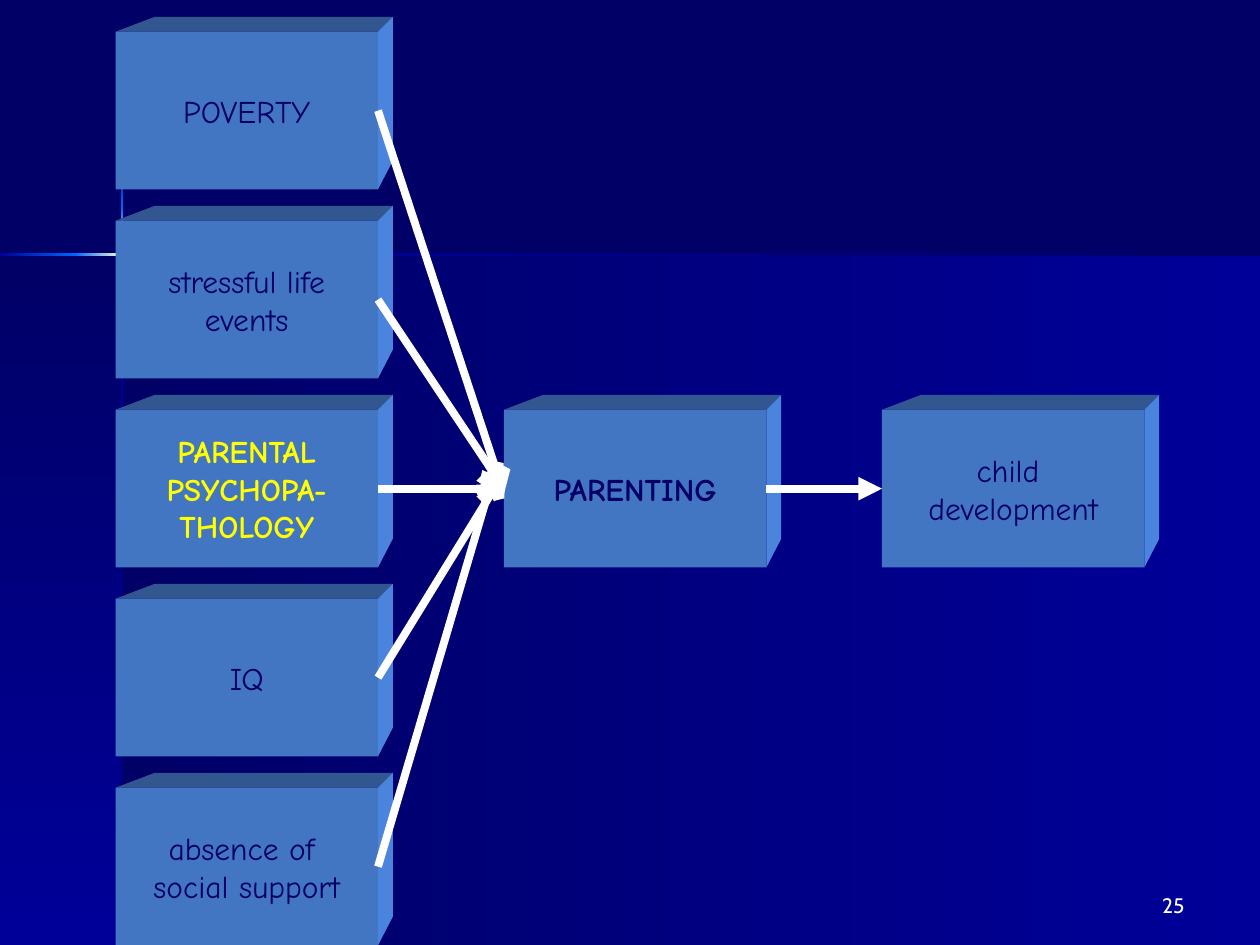
import copy

import pptx
import pptx.dml.color
import pptx.enum.shapes
import pptx.enum.text
import pptx.oxml
import pptx.oxml.ns
import pptx.util

Cm = pptx.util.Cm
Pt = pptx.util.Pt
ALIGN = pptx.enum.text.PP_ALIGN
ANCHOR = pptx.enum.text.MSO_ANCHOR
RECT = pptx.enum.shapes.MSO_SHAPE.RECTANGLE
STRAIGHT = pptx.enum.shapes.MSO_CONNECTOR.STRAIGHT

NAVY, BLUE, AZURE, CREAM = "000066", "000099", "0066FF", "FFFFCC"
WHITE, YELLOW = "FFFFFF", "FFFF00"
FRONT, TOP, SIDE = "4275C2", "32568F", "4A84DC"
WIDE, HIGH, DEEP = 5.29, 3.18, 0.3  # block size in cm


def rgb(code):
    return pptx.dml.color.RGBColor.from_string(code)


class Deck:
    """Style of the diagram and the slide it is drawn on."""

    font = "Comic Neue"
    size = 18

    def __init__(self, wide, high):
        self.show = pptx.Presentation()
        self.show.slide_width = Cm(wide)
        self.show.slide_height = Cm(high)
        self.slide = self.show.slides.add_slide(self.show.slide_layouts[6])
        fill = self.slide.background.fill
        fill.solid()
        fill.fore_color.rgb = rgb(NAVY)

    def rect(self, x, y, w, h):
        shape = self.slide.shapes.add_shape(RECT, Cm(x), Cm(y), Cm(w), Cm(h))
        shape.shadow.inherit = False
        shape.line.fill.background()
        return shape

    def blend(self, x, y, w, h, angle, *codes):
        """Rectangle with evenly spaced gradient stops."""
        shape = self.rect(x, y, w, h)
        fill = shape.fill
        fill.gradient()
        fill.gradient_angle = angle
        first = shape._element.xpath(".//a:gs")[0]
        for _ in codes[2:]:
            first.addnext(copy.deepcopy(first))
        for i, (stop, code) in enumerate(zip(fill.gradient_stops, codes)):
            stop.position = i / (len(codes) - 1)
            stop.color.rgb = rgb(code)

    def face(self, code, *points):
        spots = [(Cm(x), Cm(y)) for x, y in points]
        form = self.slide.shapes.build_freeform(*spots[0])
        form.add_line_segments(spots[1:], close=True)
        shape = form.convert_to_shape()
        shape.shadow.inherit = False
        shape.line.fill.background()
        shape.fill.solid()
        shape.fill.fore_color.rgb = rgb(code)

    def label(self, frame, text, size, font, code, align, bold=False):
        frame.text = text
        for par in frame.paragraphs:
            par.alignment = align
            for run in par.runs:
                run.font.size = Pt(size)
                run.font.name = font
                run.font.bold = bold
                run.font.color.rgb = rgb(code)

    def block(self, x, y, text, code=NAVY, bold=False):
        """Box with a top and a right face that give it depth."""
        right, back = x + WIDE, x + WIDE + DEEP
        self.face(TOP, (x, y), (x + 0.79, y - DEEP), (back, y - DEEP), (right, y))
        self.face(SIDE, (right, y), (back, y - DEEP),
                  (back, y + 2.6), (right, y + HIGH))
        box = self.rect(x, y, WIDE, HIGH)
        box.fill.solid()
        box.fill.fore_color.rgb = rgb(FRONT)
        frame = box.text_frame
        frame.word_wrap = False
        frame.vertical_anchor = ANCHOR.MIDDLE
        self.label(frame, text, self.size, self.font, code, ALIGN.CENTER, bold)
        return box

    def arrow(self, start, head, goal=None, end=(0, 0)):
        """Arrow from a block's right side to a block or to a point."""
        line = self.slide.shapes.add_connector(
            STRAIGHT, 0, 0, Cm(end[0]), Cm(end[1]))
        line.begin_connect(start, 3)
        if goal is not None:
            line.end_connect(goal, 1)
        line.line.color.rgb = rgb(WHITE)
        line.line.width = Pt(4.5)
        space = pptx.oxml.ns.nsdecls("a")
        props = line._element.spPr
        props.find(pptx.oxml.ns.qn("a:ln")).append(
            pptx.oxml.parse_xml(f'<a:tailEnd {space} type="{head}"/>'))
        props.append(pptx.oxml.parse_xml(f"<a:effectLst {space}/>"))

    def number(self, x, y, w, h, text):
        frame = self.slide.shapes.add_textbox(
            Cm(x), Cm(y), Cm(w), Cm(h)).text_frame
        frame.word_wrap = True
        frame.vertical_anchor = ANCHOR.BOTTOM
        self.label(frame, text, 12, "Cabin", WHITE, ALIGN.RIGHT)


def main():
    deck = Deck(25.4, 19.05)

    # Background panels
    deck.blend(2.46, 5.13, 22.94, 13.92, 0, NAVY, BLUE)
    deck.blend(0, 5.13, 2.46, 13.92, 270, NAVY, BLUE)

    # Thin glowing lines: vertical, then horizontal
    for y, h, codes in [
        (0.03, 3.04, (NAVY, BLUE)),
        (7.16, 11.89, (BLUE, NAVY)),
        (3.07, 1.12, (BLUE, AZURE)),
        (4.19, 1.86, (AZURE, CREAM, AZURE)),
    ]:
        deck.blend(2.44, y, 0.05, h, 270, *codes)
    for x, w, codes in [
        (4.5, 20.9, (BLUE, NAVY)),
        (0, 1.54, (BLUE, AZURE)),
        (1.52, 1.86, (AZURE, CREAM, AZURE)),
    ]:
        deck.blend(x, 5.11, w, 0.05, 0, *codes)

    # Causes, one below the other
    first, step = 0.64, 3.81
    causes = [
        ("POVERTY",),
        ("stressful life\nevents",),
        ("PARENTAL\nPSYCHOPA-\nTHOLOGY", YELLOW, True),
        ("IQ",),
        ("absence of \nsocial support",),
    ]
    poor, stress, mind, brain, alone = [
        deck.block(2.33, first + i * step, *cause)
        for i, cause in enumerate(causes)]

    # Outcomes, level with the middle cause
    level = first + 2 * step
    care = deck.block(10.16, level, "PARENTING", NAVY, True)
    child = deck.block(17.78, level, "child \ndevelopment")

    # Arrows
    deck.arrow(mind, "arrow", care)
    deck.arrow(care, "triangle", child)
    deck.arrow(poor, "arrow", end=(10.16, 9.96))
    deck.arrow(stress, "arrow", care)
    deck.arrow(brain, "arrow", end=(10.16, 9.53))
    deck.arrow(alone, "arrow", end=(9.96, 9.53))

    # Slide number
    deck.number(18.21, 17.35, 5.92, 1.27, "25")

    deck.show.save("out.pptx")


if __name__ == "__main__":
    main()
